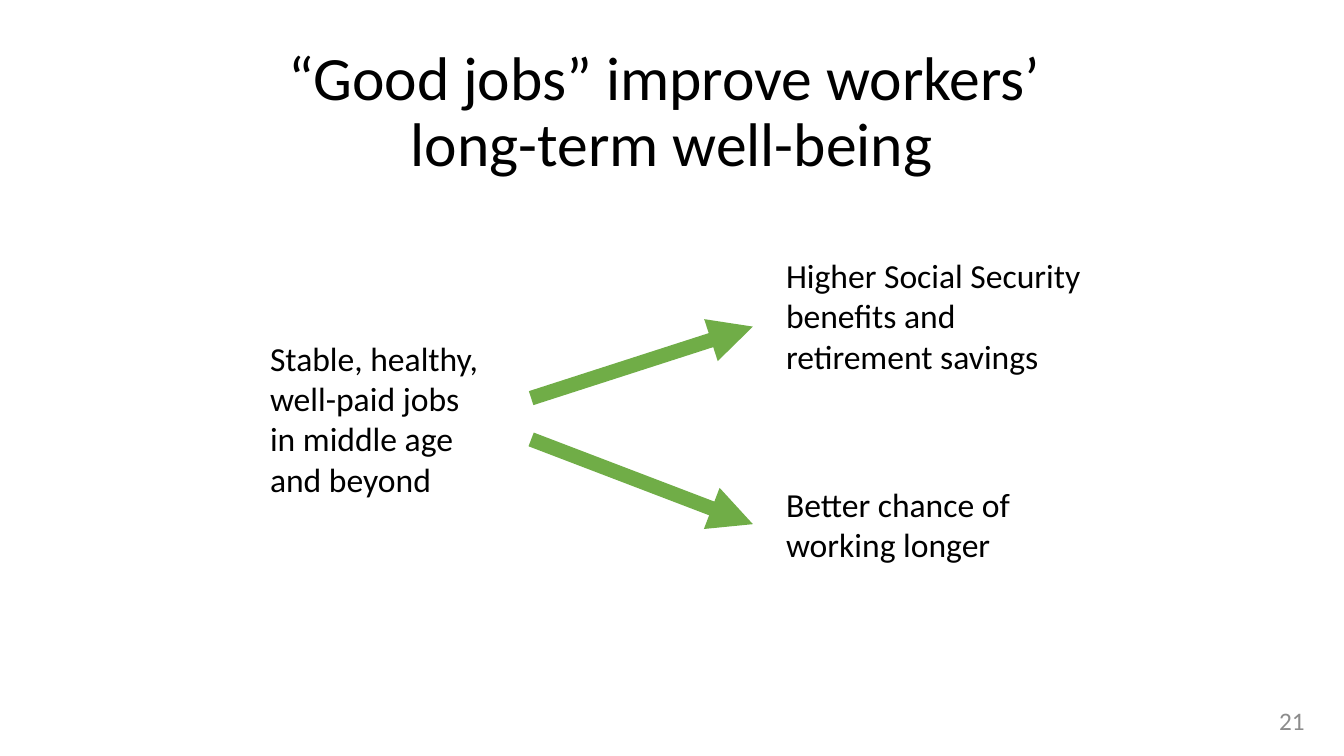
from pptx import Presentation
from pptx.dml.color import RGBColor
from pptx.enum.shapes import MSO_CONNECTOR
from pptx.enum.text import MSO_ANCHOR, PP_ALIGN
from pptx.oxml.ns import qn
from pptx.util import Pt
from lxml.etree import SubElement

BLACK = RGBColor(0x00, 0x00, 0x00)
GRAY = RGBColor(0x8C, 0x8C, 0x8C)
GREEN = RGBColor(0x70, 0xAD, 0x47)


def write_text(frame, text, size=24, color=BLACK, font="Calibri",
               align=PP_ALIGN.LEFT, line_spacing=1.0):
    para = frame.paragraphs[0]
    para.text = text
    para.alignment = align
    para.line_spacing = line_spacing
    for span in para.runs:
        span.font.name = font
        span.font.size = Pt(size)
        span.font.color.rgb = color


class SlideBuilder:
    arrow_color = GREEN
    arrow_weight = 10.5

    def __init__(self, page):
        self.page = page

    def text_box(self, left, top, width, height, text, anchor=MSO_ANCHOR.TOP, **style):
        box = self.page.shapes.add_textbox(Pt(left), Pt(top), Pt(width), Pt(height))
        box.text_frame.word_wrap = True
        box.text_frame.vertical_anchor = anchor
        write_text(box.text_frame, text, **style)

    def arrow(self, start, end):
        connector = self.page.shapes.add_connector(
            MSO_CONNECTOR.STRAIGHT, *map(Pt, start + end))
        connector.line.color.rgb = self.arrow_color
        connector.line.width = Pt(self.arrow_weight)
        SubElement(connector.line._get_or_add_ln(), qn("a:tailEnd"), type="triangle")
        SubElement(connector._element.spPr, qn("a:effectLst"))


def main():
    deck = Presentation()
    deck.slide_width = Pt(960)
    deck.slide_height = Pt(540)
    builder = SlideBuilder(deck.slides.add_slide(deck.slide_layouts[6]))

    builder.text_box(723, 500, 216, 28.8, "21", MSO_ANCHOR.MIDDLE,
                     size=18, color=GRAY, align=PP_ALIGN.RIGHT)
    builder.text_box(66, 28.75, 828, 104.4,
                     "“Good jobs” improve workers’ \nlong-term well-being",
                     MSO_ANCHOR.MIDDLE, size=44, align=PP_ALIGN.CENTER, line_spacing=0.9)

    builder.text_box(185.8, 237.6, 203.8, 152.6,
                     "Stable, healthy, \nwell-paid jobs \nin middle age \nand beyond")

    outcomes = [
        ("Higher Social Security benefits and retirement savings", 178.6, 94.3, 284.4, 233.3),
        ("Better chance of working longer", 342, 65.5, 313.9, 374.4),
    ]
    for text, top, height, arrow_start, arrow_end in outcomes:
        builder.text_box(554.4, top, 235.4, height, text)
        builder.arrow((379.4, arrow_start), (537.8, arrow_end))

    deck.save("out.pptx")


if __name__ == "__main__":
    main()
